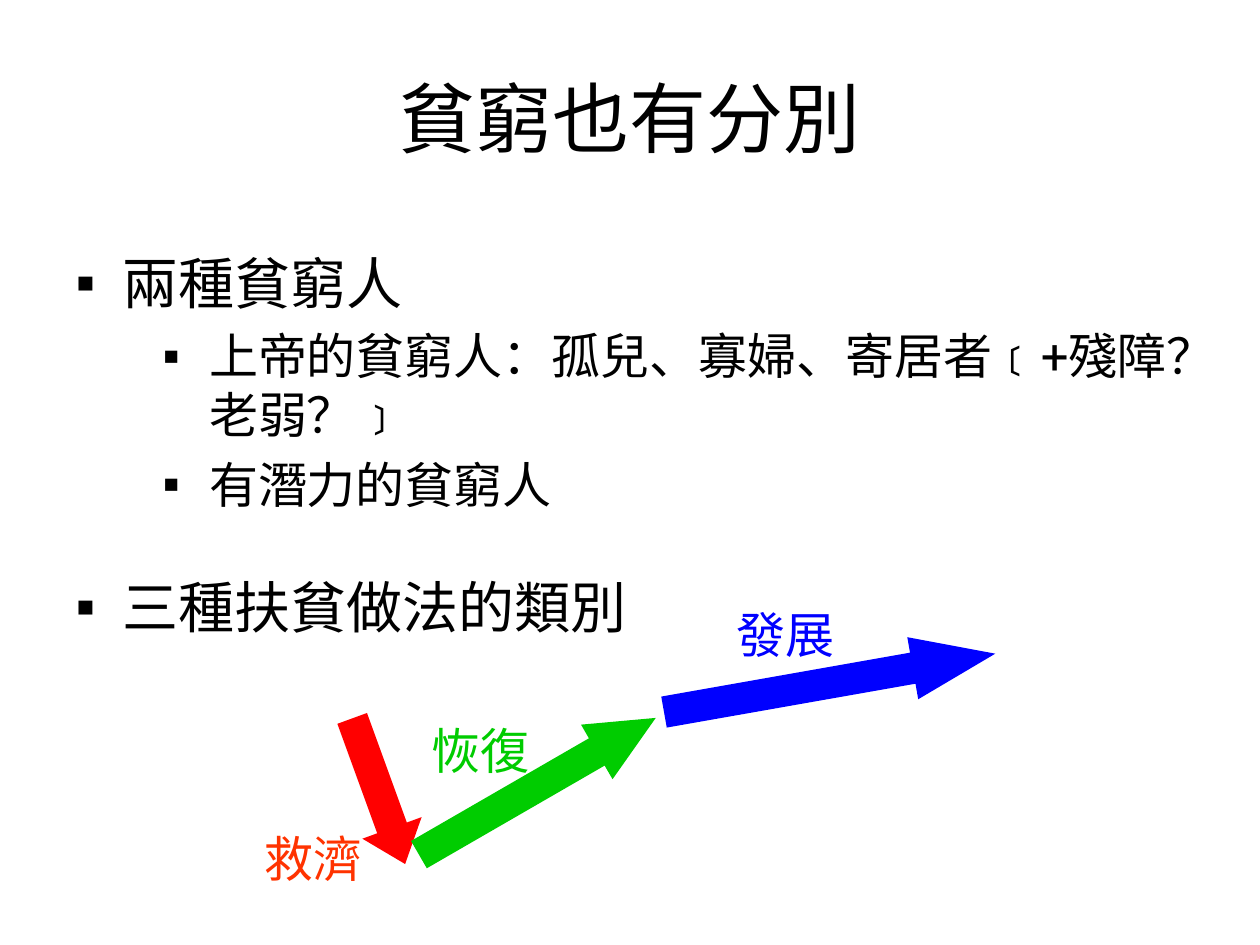
from lxml.etree import SubElement
from pptx import Presentation
from pptx.dml.color import RGBColor
from pptx.enum.shapes import MSO_SHAPE
from pptx.enum.text import MSO_ANCHOR, MSO_AUTO_SIZE, PP_ALIGN
from pptx.oxml.ns import qn
from pptx.util import Inches, Pt

BLACK = RGBColor(0x00, 0x00, 0x00)
RED = RGBColor(0xFF, 0x00, 0x00)
ORANGE = RGBColor(0xFF, 0x33, 0x00)
GREEN = RGBColor(0x00, 0xCC, 0x00)
BLUE = RGBColor(0x00, 0x00, 0xFF)
ARROW_HEIGHT = 0.5

# Level, space before in points, runs of text and font
POINTS = [
    (0, 0, [("兩種貧窮人", "Roboto")]),
    (1, 6, [("上帝的", "Arial"),
            ("貧窮人：孤兒、寡婦、寄居者﹝+殘障？老弱？﹞", "Roboto")]),
    (1, 6, [("有潛力", "Roboto"), ("的", "Arial"), ("貧窮人", "Roboto")]),
    (0, 34, [("三種扶貧做法的類別", "Arial")]),
]
# Left indent and text size for each level
LEVELS = [(0.37, 32), (1.06, 28)]

# Arrow: left, top, length, rotation, head ratio, colour
# Label: text, left, top, colour
STAGES = [
    ((2.39, 6.03, 1.23, 70, 0.61, RED), ("救濟", 2, 6.53, ORANGE)),
    ((3.18, 5.99, 2.17, 330, 1.08, GREEN), ("恢復", 3.33, 5.67, GREEN)),
    ((5.25, 5.17, 2.67, 350, 1.33, BLUE), ("發展", 5.75, 4.75, BLUE)),
]


def add_text(para, text, *, font="Arial", size=28, color=BLACK):
    span = para.add_run()
    span.text = text
    span.font.size = Pt(size)
    span.font.color.rgb = color
    span.font.name = font
    # East Asian characters take the same font
    SubElement(span.font._element, qn("a:ea"), typeface=font)


def set_bullet(para, indent, hanging):
    properties = para._p.get_or_add_pPr()
    properties.set("marL", str(Inches(indent)))
    properties.set("indent", str(-Inches(hanging)))
    SubElement(properties, qn("a:buFont"), typeface="Arial")
    SubElement(properties, qn("a:buChar"), char="▪")


def place(shape, left, top, width, height):
    shape.left, shape.top = Inches(left), Inches(top)
    shape.width, shape.height = Inches(width), Inches(height)


def fill_title(title, box):
    place(title, *box)
    frame = title.text_frame
    frame.auto_size = MSO_AUTO_SIZE.NONE
    frame.vertical_anchor = MSO_ANCHOR.MIDDLE
    para = frame.paragraphs[0]
    para.alignment = PP_ALIGN.CENTER
    add_text(para, "貧窮也有分別", font="Roboto", size=44)


def fill_body(body, box):
    place(body, *box)
    frame = body.text_frame
    frame.auto_size = MSO_AUTO_SIZE.NONE
    for number, (level, gap, spans) in enumerate(POINTS):
        para = frame.add_paragraph() if number else frame.paragraphs[0]
        indent, size = LEVELS[level]
        para.level = level
        set_bullet(para, indent, 0.37)
        para.space_before = Pt(gap)
        for text, font in spans:
            add_text(para, text, font=font, size=size)


def add_arrow(page, left, top, length, rotation, head, color):
    arrow = page.shapes.add_shape(
        MSO_SHAPE.RIGHT_ARROW, Inches(left), Inches(top),
        Inches(length), Inches(ARROW_HEIGHT))
    arrow.rotation = rotation
    arrow.adjustments[0] = 0.5
    arrow.adjustments[1] = head
    arrow.fill.solid()
    arrow.fill.fore_color.rgb = color
    arrow.line.fill.background()
    arrow.shadow.inherit = False


def add_label(page, text, left, top, color):
    label = page.shapes.add_textbox(
        Inches(left), Inches(top), Inches(0.98), Inches(0.57))
    label.text_frame.word_wrap = False
    label.text_frame.auto_size = MSO_AUTO_SIZE.SHAPE_TO_FIT_TEXT
    add_text(label.text_frame.paragraphs[0], text, color=color)


def add_stages(page):
    for arrow, label in STAGES:
        add_arrow(page, *arrow)
        add_label(page, *label)


def main():
    deck = Presentation()
    deck.slide_width, deck.slide_height = Inches(10), Inches(7.5)
    page = deck.slides.add_slide(deck.slide_layouts[1])
    fill_title(page.shapes.title, (0.5, 0.3, 9, 1.25))
    fill_body(page.placeholders[1], (0.5, 1.92, 9, 3.33))
    add_stages(page)
    deck.save("out.pptx")


if __name__ == "__main__":
    main()
